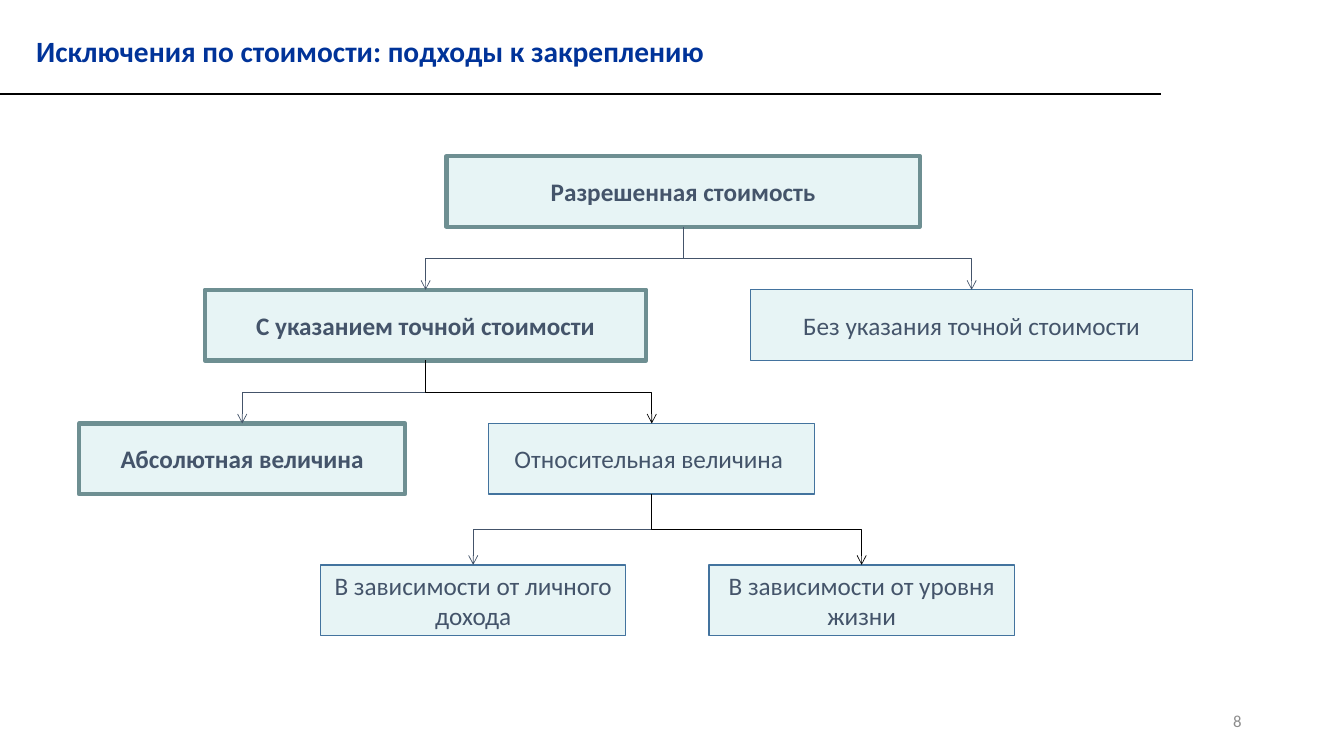
from lxml import etree
from pptx import Presentation
from pptx.dml.color import RGBColor
from pptx.enum.shapes import MSO_CONNECTOR as Link, MSO_SHAPE as Shape
from pptx.enum.text import MSO_ANCHOR as Anchor, PP_ALIGN as Align
from pptx.oxml.ns import qn
from pptx.util import Pt

# Content: key -> text, centre x, row, width, highlighted
TITLE = "Исключения по стоимости: подходы к закреплению"
PAGE_NUMBER = "8"
BOXES = {
    "allowed": ("Разрешенная стоимость", 488, 0, 338, True),
    "exact": ("С указанием точной стоимости", 304, 1, 315.5, True),
    "inexact": ("Без указания точной стоимости", 694, 1, 315.5, False),
    "absolute": ("Абсолютная величина", 173, 2, 233, True),
    "relative": ("Относительная величина ", 465.5, 2, 233, False),
    "income": ("В зависимости от личного дохода", 338, 3, 218, False),
    "living": ("В зависимости от уровня жизни", 615.5, 3, 218, False),
}
# Links: parent, child, colour
LINKS = [
    ("allowed", "exact", "44546A"),
    ("allowed", "inexact", "44546A"),
    ("exact", "absolute", "44546A"),
    ("exact", "relative", "000000"),
    ("relative", "income", "44546A"),
    ("relative", "living", "000000"),
]
ROW_TOPS = [111.5, 207, 302.5, 403.5]
BOX_HEIGHT = 50.5

deck = Presentation()
deck.slide_width, deck.slide_height = Pt(960), Pt(540)
page = deck.slides.add_slide(deck.slide_layouts[6])


def color(code):
    return RGBColor.from_string(code)


def write(shape, text, size, code, bold=False, align=Align.LEFT):
    para = shape.text_frame.paragraphs[0]
    para.alignment = align
    span = para.add_run()
    span.text = text
    span.font.name, span.font.size, span.font.bold = "Calibri", Pt(size), bold
    span.font.color.rgb = color(code)


def style_line(connector, code, width):
    connector.line.color.rgb = color(code)
    connector.line.width = Pt(width)
    etree.SubElement(connector._element.spPr, qn("a:effectLst"))


def add_box(text, center, row, width, strong):
    box = page.shapes.add_shape(Shape.RECTANGLE, Pt(center - width / 2),
                                Pt(ROW_TOPS[row]), Pt(width), Pt(BOX_HEIGHT))
    box.shadow.inherit = False
    box.fill.solid()
    box.fill.fore_color.rgb = color("E7F4F5")
    box.line.color.rgb = color("6E8F92" if strong else "43739E")
    box.line.width = Pt(3 if strong else 1)
    box.text_frame.word_wrap = True
    box.text_frame.vertical_anchor = Anchor.MIDDLE
    write(box, text, 18, "44546A", strong, Align.CENTER)
    return box


def add_link(parent, child, code):
    """Elbow arrow that leaves downwards: a turned connector."""
    x1, y1 = parent.left + parent.width // 2, parent.top + parent.height
    x2, y2 = child.left + child.width // 2, child.top
    link = page.shapes.add_connector(Link.ELBOW, x1, y1, x2, y2)
    link.begin_connect(parent, 2)
    link.end_connect(child, 0)
    link.width, link.height = y2 - y1, abs(x2 - x1)
    link.left = (x1 + x2 - link.width) // 2
    link.top = (y1 + y2 - link.height) // 2
    rightward = x2 > x1
    frame = link._element.spPr.find(qn("a:xfrm"))
    frame.set("rot", str((270 if rightward else 90) * 60000))
    frame.set("flipH", "1" if rightward else "0")
    frame.set("flipV", "0")
    style_line(link, code, 0.5)
    etree.SubElement(link.line._get_or_add_ln(), qn("a:tailEnd"), type="arrow")


# Title, rule and page number
title = page.shapes.add_textbox(Pt(18.7), Pt(20.2), Pt(495), Pt(32.4))
title.text_frame.word_wrap = False
write(title, TITLE, 21, "003399", True)
rule = page.shapes.add_connector(Link.STRAIGHT, 0, Pt(67), Pt(829.5), Pt(67))
style_line(rule, "000000", 1.5)
number = page.shapes.add_textbox(Pt(678), Pt(500.5), Pt(216), Pt(28.8))
number.text_frame.word_wrap = True
number.text_frame.vertical_anchor = Anchor.MIDDLE
write(number, PAGE_NUMBER, 12, "8C8C8C", align=Align.RIGHT)

# Tree
boxes = {key: add_box(*details) for key, details in BOXES.items()}
for parent, child, code in LINKS:
    add_link(boxes[parent], boxes[child], code)

deck.save("out.pptx")
